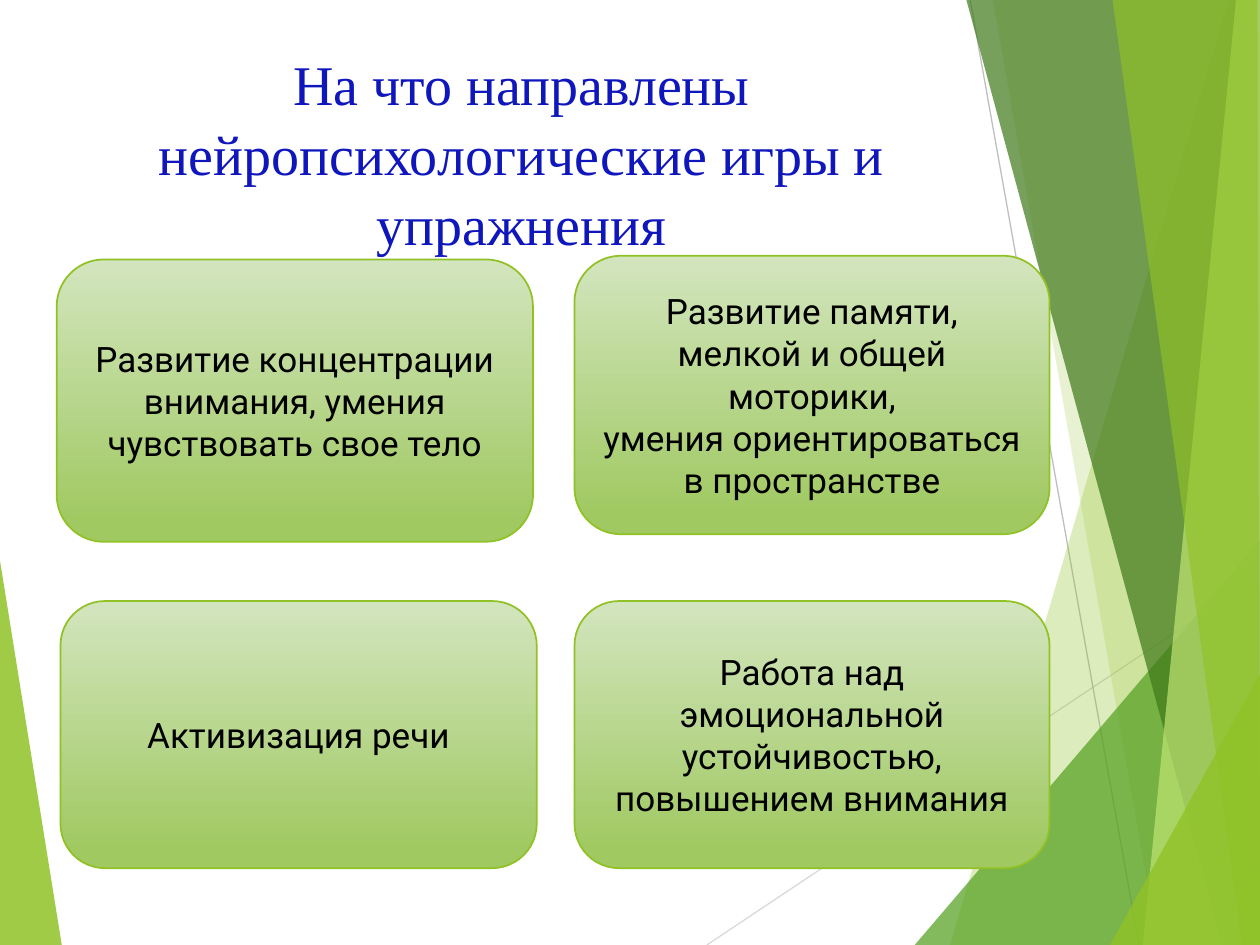
from dataclasses import dataclass
from lxml.etree import SubElement
from pptx import Presentation
from pptx.dml.color import RGBColor
from pptx.enum.shapes import MSO_CONNECTOR as Connector, MSO_SHAPE as Preset
from pptx.enum.text import MSO_ANCHOR as Anchor, PP_ALIGN as Align
from pptx.oxml.ns import qn
from pptx.util import Inches, Pt

COLUMNS, ROWS = 10, 7.5
UNIT = Inches(1)


@dataclass(frozen=True)
class Theme:
    title_color: str = "0E16BC"
    text_color: str = "000000"
    accent: str = "90C226"
    card_top: str = "D3E5BE"
    card_bottom: str = "A0C962"
    title_font: str = "Times New Roman"
    card_font: str = "Roboto"
    title_size: float = 32
    card_size: float = 20
    card_line: float = 1
    ray_line: float = 0.75


@dataclass(frozen=True)
class Facet:
    points: tuple
    color: str
    opacity: int


@dataclass(frozen=True)
class Ray:
    start: tuple
    end: tuple
    color: str


@dataclass(frozen=True)
class Card:
    box: tuple
    paragraphs: tuple


THEME = Theme()
TITLE = "На что направлены нейропсихологические игры и упражнения"
TITLE_BOX = (0.67, 0.29, 6.94, 1.83)

LEFT_FACET = Facet(((0, 4.45), (0.49, ROWS), (0, ROWS)), THEME.accent, 85)
RAYS = (
    Ray((5.61, ROWS), (COLUMNS, 4.57), "D9D9D9"),
    Ray((7.7, 0), (9.04, ROWS), "BFBFBF"),
)


def right_facet(top: tuple, foot: float, color: str, opacity: int) -> Facet:
    corners = ((COLUMNS, 0),) if top[1] == 0 else ()
    points = (top, (foot, ROWS), (COLUMNS, ROWS)) + corners
    return Facet(points, color, opacity)


RIGHT_FACETS = (
    right_facet((9.75, 0), 7.54, THEME.accent, 30),
    right_facet((7.88, 0), 9.19, THEME.accent, 20),
    right_facet((COLUMNS, 4.29), 7.26, "54A021", 72),
    right_facet((7.67, 0), 9.7, "3F7819", 70),
    right_facet((9.81, 0), 9.07, "C0E474", 70),
    Facet(((8.83, 0), (9.86, ROWS), (COLUMNS, ROWS), (9.98, 0)), THEME.accent, 65),
    right_facet((COLUMNS, 5.35), 8.81, THEME.accent, 80),
)
CARDS = (
    Card((0.48, 4.77, 3.78, 2.12), ("Активизация речи",)),
    Card((0.45, 2.06, 3.78, 2.24),
         ("Развитие концентрации внимания, умения чувствовать свое тело",)),
    Card((4.56, 2.03, 3.77, 2.21),
         ("Развитие памяти, мелкой и общей моторики,",
          "умения ориентироваться в пространстве")),
    Card((4.56, 4.77, 3.77, 2.12),
         ("Работа над эмоциональной устойчивостью, повышением внимания",)),
)


def place(values: tuple) -> tuple:
    return tuple(round(value * UNIT) for value in values)


def rgb(color: str) -> RGBColor:
    return RGBColor.from_string(color)


def draw_facet(slide, facet: Facet) -> None:
    start, *rest = (place(point) for point in facet.points)
    builder = slide.shapes.build_freeform(*start)
    builder.add_line_segments(rest, close=True)
    shape = builder.convert_to_shape()
    shape.shadow.inherit = False
    shape.line.fill.background()
    shape.fill.solid()
    shape.fill.fore_color.rgb = rgb(facet.color)
    color = shape._element.spPr.find(qn("a:solidFill")).find(qn("a:srgbClr"))
    SubElement(color, qn("a:alpha")).set("val", str(facet.opacity * 1000))


def draw_ray(slide, ray: Ray) -> None:
    connector = slide.shapes.add_connector(
        Connector.STRAIGHT, *place(ray.start), *place(ray.end))
    connector.line.color.rgb = rgb(ray.color)
    connector.line.width = Pt(THEME.ray_line)
    SubElement(connector._element.spPr, qn("a:effectLst"))


def write_text(shape, paragraphs: tuple, font: dict, color: str, spacing: float) -> None:
    frame = shape.text_frame
    frame.word_wrap = True
    frame.vertical_anchor = Anchor.MIDDLE
    frame.text = "\n".join(paragraphs)
    for paragraph in frame.paragraphs:
        paragraph.alignment = Align.CENTER
        paragraph.line_spacing = spacing
        run_font = paragraph.runs[0].font
        for name, value in font.items():
            setattr(run_font, name, value)
        run_font.color.rgb = rgb(color)


def draw_card(slide, card: Card) -> None:
    shape = slide.shapes.add_shape(Preset.FLOWCHART_ALTERNATE_PROCESS, *place(card.box))
    shape.shadow.inherit = False
    shape.fill.gradient()
    shape.fill.gradient_angle = 270
    stops = ((0, THEME.card_top), (0.93, THEME.card_bottom))
    for stop, (position, color) in zip(shape.fill.gradient_stops, stops):
        stop.position = position
        stop.color.rgb = rgb(color)
    shape.line.color.rgb = rgb(THEME.accent)
    shape.line.width = Pt(THEME.card_line)
    font = {"name": THEME.card_font, "size": Pt(THEME.card_size)}
    write_text(shape, card.paragraphs, font, THEME.text_color, 1.0)


def main() -> None:
    presentation = Presentation()
    presentation.slide_width, presentation.slide_height = place((COLUMNS, ROWS))
    slide = presentation.slides.add_slide(presentation.slide_layouts[6])
    draw_facet(slide, LEFT_FACET)
    for ray in RAYS:
        draw_ray(slide, ray)
    for facet in RIGHT_FACETS:
        draw_facet(slide, facet)
    title = slide.shapes.add_textbox(*place(TITLE_BOX))
    font = {"name": THEME.title_font, "size": Pt(THEME.title_size)}
    write_text(title, (TITLE,), font, THEME.title_color, 1.04)
    for card in CARDS:
        draw_card(slide, card)
    presentation.save("out.pptx")


if __name__ == "__main__":
    main()
